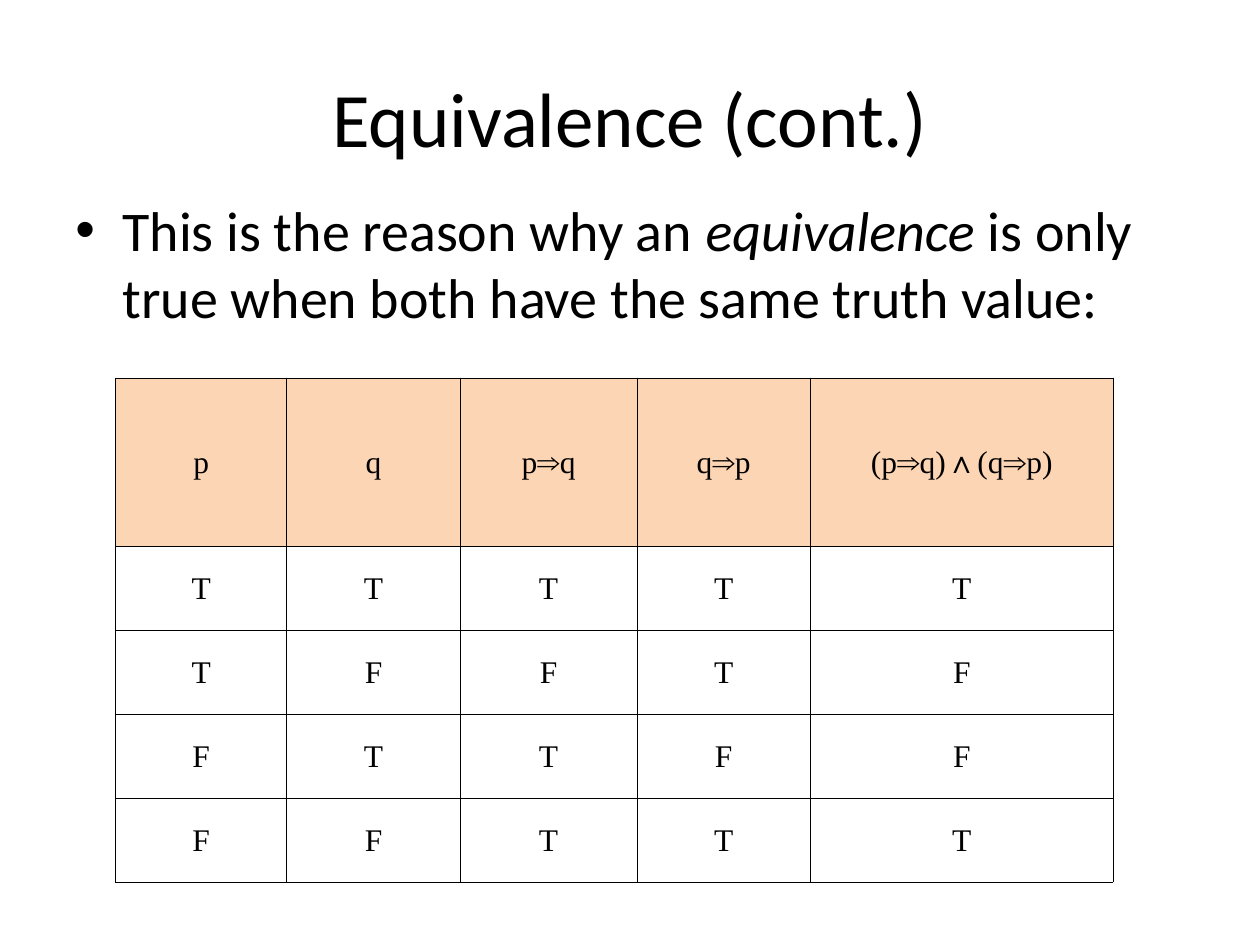
from dataclasses import dataclass
from itertools import product

from lxml import etree
from pptx import Presentation
from pptx import util as u
from pptx.dml.color import RGBColor
from pptx.enum import text
from pptx.oxml import ns


@dataclass(frozen=True)
class Theme:
    """Colours, fonts and type sizes of the slide."""
    ink: str = "000000"
    header: str = "FCD5B4"
    sans: str = "Calibri"
    serif: str = "Times New Roman"
    title: int = 44
    body: int = 32
    cell: int = 18
    rule: float = 0.5


THEME = Theme()


def write(frame, runs, *, size, font=THEME.sans, align=text.PP_ALIGN.LEFT,
          anchor=text.MSO_ANCHOR.TOP, bullet=None, hang=0):
    """Write (wording, italic) runs as the one paragraph of a text frame."""
    frame.word_wrap = True
    frame.vertical_anchor = anchor
    paragraph = frame.paragraphs[0]
    paragraph.alignment = align
    if bullet:
        properties = paragraph._p.get_or_add_pPr()
        properties.set("marL", str(u.Cm(hang)))
        properties.set("indent", str(-u.Cm(hang)))
        etree.SubElement(properties, ns.qn("a:buFont"), typeface="Arial")
        etree.SubElement(properties, ns.qn("a:buChar"), char=bullet)
    for wording, italic in runs:
        run = paragraph.add_run()
        run.text = wording
        run.font.name = font
        run.font.size = u.Pt(size)
        run.font.italic = italic
        run.font.color.rgb = RGBColor.from_string(THEME.ink)


def add_title(slide, left, top, width, height):
    """Place the centred slide title."""
    title = slide.shapes.add_textbox(*map(u.Cm, (left, top, width, height)))
    write(title.text_frame, [("Equivalence (cont.)", False)], size=THEME.title,
          align=text.PP_ALIGN.CENTER, anchor=text.MSO_ANCHOR.MIDDLE)


def add_reason(slide, left, top, width, height):
    """Place the bulleted explanation."""
    reason = slide.shapes.add_textbox(*map(u.Cm, (left, top, width, height)))
    write(reason.text_frame,
          [("This is the reason why an ", False),
           ("equivalence", True),
           (" is only true when both have the same truth value:", False)],
          size=THEME.body, bullet="•", hang=0.95)


def rule_cell(cell):
    """Draw a thin line on all four sides of a cell."""
    properties = cell._tc.get_or_add_tcPr()
    for side in ("lnL", "lnR", "lnT", "lnB"):
        line = etree.SubElement(properties, ns.qn(f"a:{side}"), w=str(u.Pt(THEME.rule)))
        fill = etree.SubElement(line, ns.qn("a:solidFill"))
        etree.SubElement(fill, ns.qn("a:srgbClr"), val=THEME.ink)


def truth_rows():
    """Return the headings and the truth values of both implications and their conjunction."""
    rows = [("p", "q", "p⇒q", "q⇒p", "(p⇒q)∧(q⇒p)")]
    for p, q in product((True, False), repeat=2):
        forward, backward = not p or q, not q or p
        values = (p, q, forward, backward, forward and backward)
        rows.append(tuple("T" if value else "F" for value in values))
    return rows


def add_truth_table(slide, left, top, width, height):
    """Place the truth table, its heading row twice as high as the others."""
    rows = truth_rows()
    shares = (3.45, 3.5, 3.56, 3.5, 6.1)
    frame = slide.shapes.add_table(len(rows), len(shares),
                                   *map(u.Cm, (left, top, width, height)))
    table = frame.table
    table.horz_banding = False
    for column, share in zip(table.columns, shares):
        column.width = u.Cm(width * share / sum(shares))
    unit = height / (len(rows) + 1)
    for r, values in enumerate(rows):
        table.rows[r].height = u.Cm(unit if r else 2 * unit)
        for c, value in enumerate(values):
            cell = table.cell(r, c)
            cell.margin_left = cell.margin_right = cell.margin_top = u.Cm(0.03)
            cell.margin_bottom = 0
            cell.vertical_anchor = text.MSO_ANCHOR.MIDDLE
            rule_cell(cell)
            if r:
                cell.fill.background()
            else:
                cell.fill.solid()
                cell.fill.fore_color.rgb = RGBColor.from_string(THEME.header)
            write(cell.text_frame, [(value, False)], size=THEME.cell, font=THEME.serif,
                  align=text.PP_ALIGN.CENTER, anchor=None)


def main():
    """Build and save the slide."""
    deck = Presentation()
    deck.slide_width, deck.slide_height = u.Cm(25.4), u.Cm(19.05)
    slide = deck.slides.add_slide(deck.slide_layouts[6])
    add_title(slide, 1.27, 0.76, 22.86, 3.18)
    add_reason(slide, 1.27, 3.81, 22.86, 13.2)
    add_truth_table(slide, 2.33, 7.62, 20.11, 10.16)
    deck.save("out.pptx")


if __name__ == "__main__":
    main()
